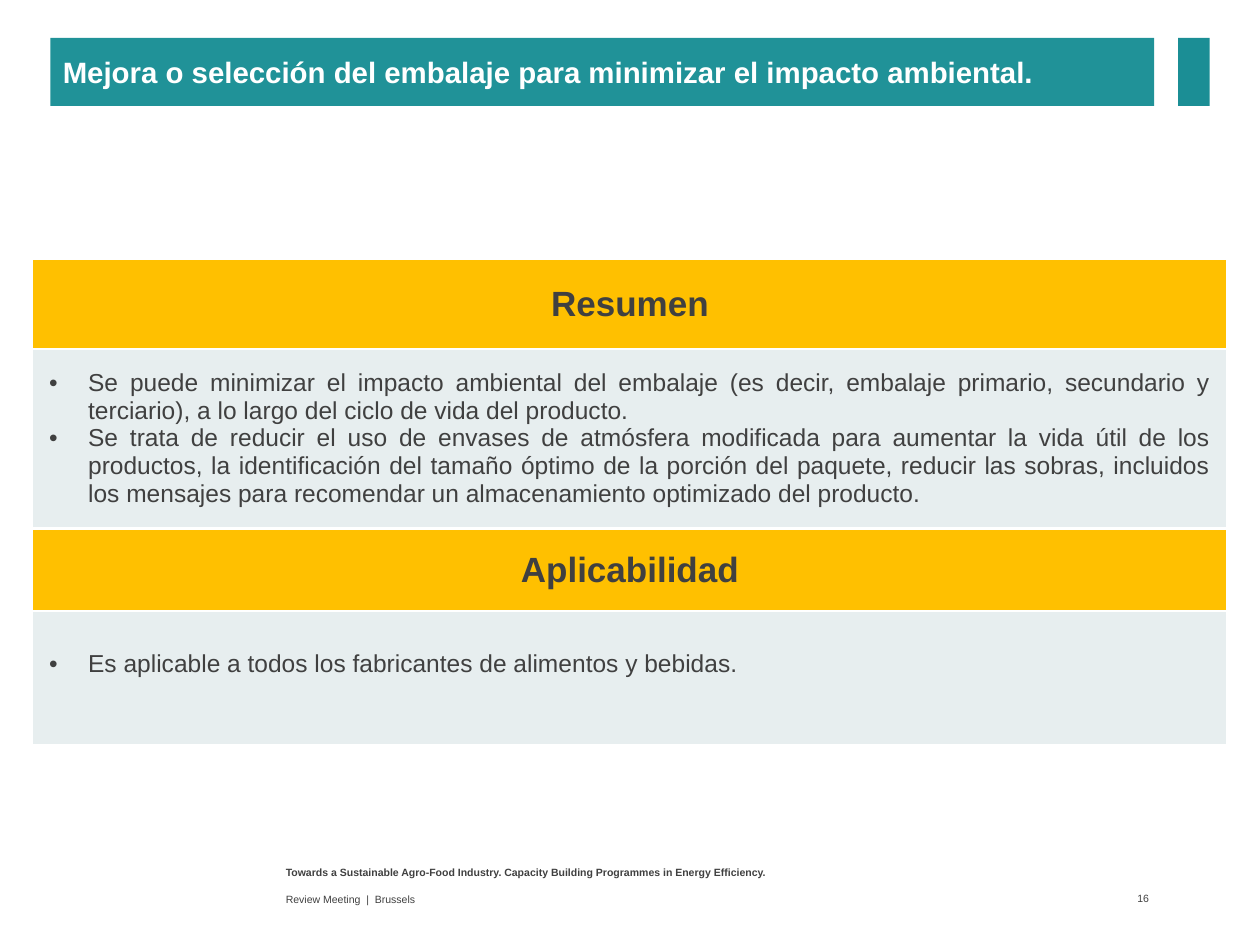
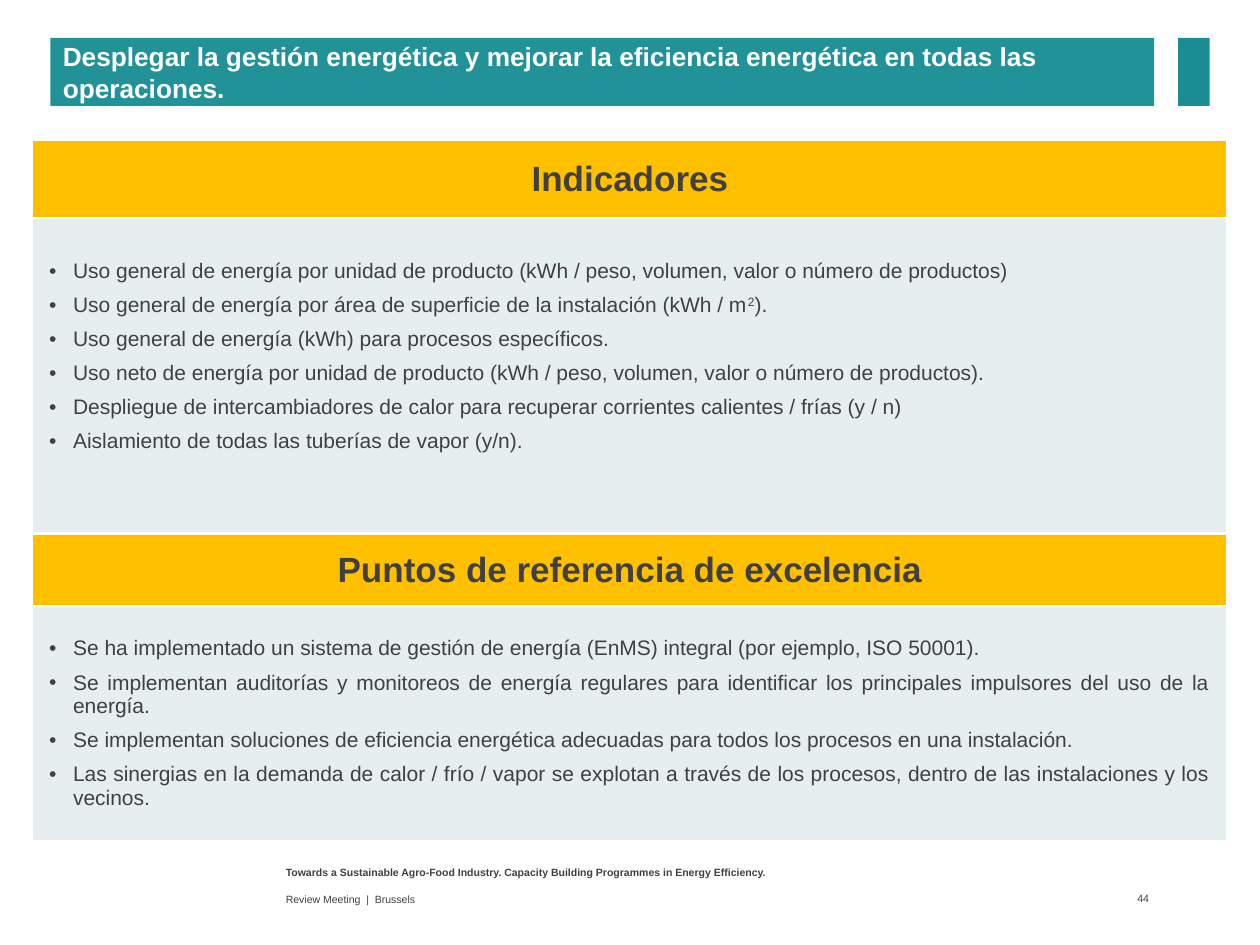
from dataclasses import dataclass

from lxml import etree
from pptx import Presentation
from pptx.dml.color import RGBColor
from pptx.enum.shapes import MSO_SHAPE
from pptx.enum.text import MSO_ANCHOR, PP_ALIGN
from pptx.oxml.ns import qn
from pptx.util import Pt

PX = 9144  # EMU per px, 100 px to the inch
RECTANGLE = MSO_SHAPE.RECTANGLE
TOP, MIDDLE = MSO_ANCHOR.TOP, MSO_ANCHOR.MIDDLE
LEFT, CENTER, RIGHT, JUSTIFY = (
    PP_ALIGN.LEFT, PP_ALIGN.CENTER, PP_ALIGN.RIGHT, PP_ALIGN.JUSTIFY)


@dataclass(frozen=True)
class Theme:
    font: str = "Arial"
    text: str = "404040"
    white: str = "FFFFFF"
    title_band: str = "209298"
    title_tab: str = "1B8E95"
    heading_fill: str = "FFC000"
    body_fill: str = "E7EEEF"
    heading_size: float = 20
    footer_size: float = 6
    border_width: float = 1


@dataclass(frozen=True)
class BulletStyle:
    size: float
    indent: int
    space_after: float


THEME = Theme()
WIDE_BULLETS = BulletStyle(size=14, indent=31, space_after=0)
SPACED_BULLETS = BulletStyle(size=12, indent=19, space_after=6)

PROJECT = ("Towards a Sustainable Agro-Food Industry. "
           "Capacity Building Programmes in Energy Efficiency.")
MEETING = "Review Meeting  |  Brussels"

# left, top, width, height
TITLE_BOX = (40, 30, 920, 54)
FOOTER_BOX = (217, 682, 699, 41)
PANEL_LEFT, PANEL_WIDTH = 26, 948

# Each panel: heading, top, row heights, extra room under the bullets, bullets.
# In a bullet given as a tuple, every second part is superscript.
SLIDES = [
    dict(
        title="Mejora o selección del embalaje para minimizar el impacto ambiental.",
        title_size=16.8, number="16", style=WIDE_BULLETS,
        panels=[
            ("Resumen", 206, (71, 142), 0, [
                "Se puede minimizar el impacto ambiental del embalaje (es decir, embalaje "
                "primario, secundario y terciario), a lo largo del ciclo de vida del producto.",
                "Se trata de reducir el uso de envases de atmósfera modificada para aumentar "
                "la vida útil de los productos, la identificación del tamaño óptimo de la "
                "porción del paquete, reducir las sobras, incluidos los mensajes para "
                "recomendar un almacenamiento optimizado del producto.",
            ]),
            ("Aplicabilidad", 420, (65, 106), 22, [
                "Es aplicable a todos los fabricantes de alimentos y bebidas.",
            ]),
        ]),
    dict(
        title="Desplegar la gestión energética y mejorar la eficiencia energética "
              "en todas las operaciones.",
        title_size=15, number="44", style=SPACED_BULLETS,
        panels=[
            ("Indicadores", 111, (62, 250), 30, [
                "Uso general de energía por unidad de producto "
                "(kWh / peso, volumen, valor o número de productos)",
                ("Uso general de energía por área de superficie de la instalación (kWh / m",
                 "2", ")."),
                "Uso general de energía (kWh) para procesos específicos.",
                "Uso neto de energía por unidad de producto "
                "(kWh / peso, volumen, valor o número de productos).",
                "Despliegue de intercambiadores de calor para recuperar corrientes "
                "calientes / frías (y / n)",
                "Aislamiento de todas las tuberías de vapor (y/n).",
            ]),
            ("Puntos de referencia de excelencia", 424, (57, 186), 0, [
                "Se ha implementado un sistema de gestión de energía (EnMS) integral "
                "(por ejemplo, ISO 50001).",
                "Se implementan auditorías y monitoreos de energía regulares para "
                "identificar los principales impulsores del uso de la energía.",
                "Se implementan soluciones de eficiencia energética adecuadas para todos "
                "los procesos en una instalación.",
                "Las sinergias en la demanda de calor / frío / vapor se explotan a través "
                "de los procesos, dentro de las instalaciones y los vecinos.",
            ]),
        ]),
]


def px(*lengths):
    return [length * PX for length in lengths]


def rgb(value):
    return RGBColor.from_string(value)


def set_font(paragraph, size, color=THEME.text, bold=False):
    font = paragraph.font
    font.name, font.size, font.bold = THEME.font, Pt(size), bold
    font.color.rgb = rgb(color)


def set_margins(target, left, top, right, bottom):
    (target.margin_left, target.margin_top,
     target.margin_right, target.margin_bottom) = px(left, top, right, bottom)


def write_line(text_frame, text, size, align=LEFT, color=THEME.text, bold=False):
    paragraph = text_frame.paragraphs[0]
    paragraph.text = text
    paragraph.alignment = align
    set_font(paragraph, size, color, bold)


def add_rectangle(slide, box, color):
    shape = slide.shapes.add_shape(RECTANGLE, *px(*box))
    shape.shadow.inherit = False
    shape.fill.solid()
    shape.fill.fore_color.rgb = rgb(color)
    shape.line.fill.background()
    return shape


# Title band with the small tab at its right
def add_title(slide, box, text, size):
    left, top, width, height = box
    tab_width, gap = 25, 19
    band_width = width - tab_width - gap
    band = add_rectangle(slide, (left, top, band_width, height), THEME.title_band)
    frame = band.text_frame
    frame.word_wrap = True
    frame.vertical_anchor = MIDDLE
    write_line(frame, text, size, LEFT, THEME.white, bold=True)
    add_rectangle(slide, (left + width - tab_width, top, tab_width, height),
                  THEME.title_tab)


# Footer: project, meeting and slide number
def add_footer(slide, box, number):
    left, top, width, height = box
    number_width = 56
    parts = [
        (PROJECT, (left, top, 550, 21), TOP, LEFT, True, 10),
        (MEETING, (left, top + height - 19, 550, 19), MIDDLE, LEFT, False, 10),
        (number, (left + width - number_width, top + height - 20, number_width, 20),
         MIDDLE, RIGHT, False, 4),
    ]
    for text, part_box, anchor, align, bold, right_margin in parts:
        frame = slide.shapes.add_textbox(*px(*part_box)).text_frame
        frame.word_wrap = True
        frame.vertical_anchor = anchor
        set_margins(frame, 10, 5, right_margin, 5)
        write_line(frame, text, THEME.footer_size, align, bold=bold)


def style_cell(cell, color):
    cell.vertical_anchor = MIDDLE
    cell.fill.solid()
    cell.fill.fore_color.rgb = rgb(color)
    properties = cell._tc.get_or_add_tcPr()
    for index, side in enumerate(("lnL", "lnR", "lnT", "lnB")):
        line = etree.Element(qn(f"a:{side}"), w=str(Pt(THEME.border_width)))
        fill = etree.SubElement(line, qn("a:solidFill"))
        etree.SubElement(fill, qn("a:srgbClr"), val=THEME.white)
        properties.insert(index, line)


def write_bullet(paragraph, content, style):
    parts = (content,) if isinstance(content, str) else content
    for index, part in enumerate(parts):
        run = paragraph.add_run()
        run.text = part
        if index % 2:
            run._r.get_or_add_rPr().set("baseline", "30000")
    properties = paragraph._p.get_or_add_pPr()
    properties.set("marL", str(style.indent * PX))
    properties.set("indent", str(-style.indent * PX))
    etree.SubElement(properties, qn("a:buFont"), typeface=THEME.font)
    etree.SubElement(properties, qn("a:buChar"), char="•")
    paragraph.alignment = JUSTIFY
    paragraph.space_after = Pt(style.space_after)
    set_font(paragraph, style.size)


# Panel: a heading row above a row of bullets
def add_panel(slide, left, width, panel, style):
    heading, top, row_heights, room_below, bullets = panel
    box = px(left, top, width, sum(row_heights))
    table = slide.shapes.add_table(2, 1, *box).table
    table.first_row = table.horz_banding = False
    for row, height in zip(table.rows, row_heights):
        row.height = height * PX

    heading_cell, body_cell = table.cell(0, 0), table.cell(1, 0)
    style_cell(heading_cell, THEME.heading_fill)
    set_margins(heading_cell, 10, 5, 10, 5)
    write_line(heading_cell.text_frame, heading, THEME.heading_size, CENTER, bold=True)

    style_cell(body_cell, THEME.body_fill)
    set_margins(body_cell, 13, 6, 13, 6 + room_below)
    frame = body_cell.text_frame
    for index, bullet in enumerate(bullets):
        paragraph = frame.add_paragraph() if index else frame.paragraphs[0]
        write_bullet(paragraph, bullet, style)


def add_practice_slide(presentation, content):
    slide = presentation.slides.add_slide(presentation.slide_layouts[6])
    add_footer(slide, FOOTER_BOX, content["number"])
    add_title(slide, TITLE_BOX, content["title"], content["title_size"])
    for panel in content["panels"]:
        add_panel(slide, PANEL_LEFT, PANEL_WIDTH, panel, content["style"])


def main():
    presentation = Presentation()
    presentation.slide_width, presentation.slide_height = px(1000, 750)
    for content in SLIDES:
        add_practice_slide(presentation, content)
    presentation.save("out.pptx")


if __name__ == "__main__":
    main()
